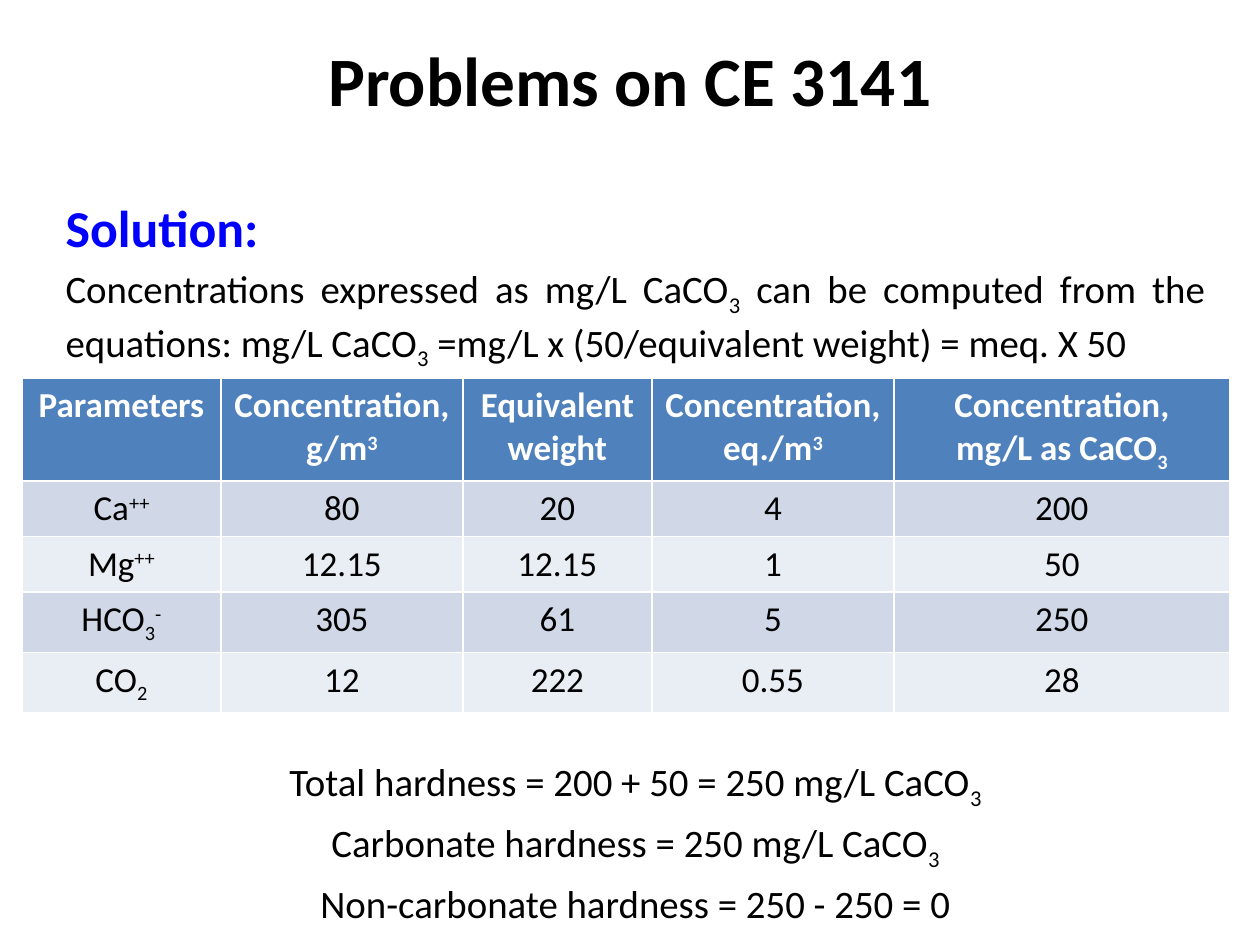
from itertools import groupby

from pptx import Presentation
from pptx.dml.color import RGBColor
from pptx.enum.text import MSO_ANCHOR, MSO_AUTO_SIZE, PP_ALIGN
from pptx.util import Emu, Pt

# Content: sub- and superscript characters become runs with a shifted baseline
TITLE = "Problems on CE 3141"
BODY = [  # text, size, colour, bold, alignment, space before
    ("Solution:", 29.6, "heading", True, PP_ALIGN.JUSTIFY, 5),
    ("Concentrations expressed as mg/L CaCO₃ can be computed from the equations: "
     "mg/L CaCO₃ =mg/L x (50/equivalent weight) = meq. X 50",
     22.2, "text", False, PP_ALIGN.JUSTIFY, 4.4),
    ("Total hardness = 200 + 50 = 250 mg/L CaCO₃", 22.2, "text", False, PP_ALIGN.CENTER, 221),
    ("Carbonate hardness = 250 mg/L CaCO₃", 22.2, "text", False, PP_ALIGN.CENTER, 4.4),
    ("Non-carbonate hardness = 250 - 250 = 0", 22.2, "text", False, PP_ALIGN.CENTER, 4.4),
]
TABLE = [
    ["Parameters", "Concentration, g/m³", "Equivalent\nweight",
     "Concentration,\neq./m³", "Concentration,\nmg/L as CaCO₃"],
    ["Ca⁺⁺", "80", "20", "4", "200"],
    ["Mg⁺⁺", "12.15", "12.15", "1", "50"],
    ["HCO₃⁻", "305", "61", "5", "250"],
    ["CO₂", "12", "222", "0.55", "28"],
]
COLUMN_WIDTHS = [199, 242, 189, 242, 336]
ROW_HEIGHTS = [102, 55, 55, 60, 60]
COLORS = {"text": "000000", "heading": "0000FF", "header_text": "FFFFFF",
          "header": "4F81BD", "odd": "D0D8E8", "even": "E9EDF4"}
SHIFTED = {"₂": ("2", -25000), "₃": ("3", -25000), "³": ("3", 30000),
           "⁺": ("+", 30000), "⁻": ("-", 30000)}
FONT = "Calibri"


def px(length):
    return Emu(length * 914400 // 126)


def place(shape, left, top, width, height):
    shape.left, shape.top = px(left), px(top)
    shape.width, shape.height = px(width), px(height)
    shape.text_frame.auto_size = MSO_AUTO_SIZE.NONE


def write(paragraph, text, size, color, bold, alignment):
    paragraph.alignment = alignment
    pieces = [SHIFTED.get(character, (character, 0)) for character in text]
    for baseline, group in groupby(pieces, key=lambda piece: piece[1]):
        run = paragraph.add_run()
        run.text = "".join(character for character, _ in group)
        run.font.name, run.font.size, run.font.bold = FONT, Pt(size), bold
        run.font.color.rgb = RGBColor.from_string(COLORS[color])
        if baseline:
            run.font._element.set("baseline", str(baseline))


def add_paragraph(text_frame, index):
    return text_frame.add_paragraph() if index else text_frame.paragraphs[0]


presentation = Presentation()
presentation.slide_width, presentation.slide_height = px(1260), px(945)
slide = presentation.slides.add_slide(presentation.slide_layouts[0])

# Title
title = slide.shapes.title
place(title, 94, 32, 1072, 94)
title.text_frame.vertical_anchor = MSO_ANCHOR.MIDDLE
write(title.text_frame.paragraphs[0], TITLE, 39.6, "text", True, PP_ALIGN.CENTER)

# Solution text, with room left for the table
body = slide.placeholders[1]
place(body, 53, 189, 1165, 703)
for index, (text, size, color, bold, alignment, space) in enumerate(BODY):
    paragraph = add_paragraph(body.text_frame, index)
    write(paragraph, text, size, color, bold, alignment)
    paragraph.space_before = Pt(space)

# Concentration table
table = slide.shapes.add_table(
    len(TABLE), len(COLUMN_WIDTHS), px(22), px(378),
    px(sum(COLUMN_WIDTHS)), px(sum(ROW_HEIGHTS))).table
for column, width in zip(table.columns, COLUMN_WIDTHS):
    column.width = px(width)
for row_index, (values, height) in enumerate(zip(TABLE, ROW_HEIGHTS)):
    table.rows[row_index].height = px(height)
    is_header = row_index == 0
    fill = "header" if is_header else ("odd" if row_index % 2 else "even")
    for column_index, value in enumerate(values):
        cell = table.cell(row_index, column_index)
        cell.fill.solid()
        cell.fill.fore_color.rgb = RGBColor.from_string(COLORS[fill])
        for index, line in enumerate(value.split("\n")):
            write(add_paragraph(cell.text_frame, index), line, 20,
                  "header_text" if is_header else "text", is_header, PP_ALIGN.CENTER)

presentation.save("out.pptx")
